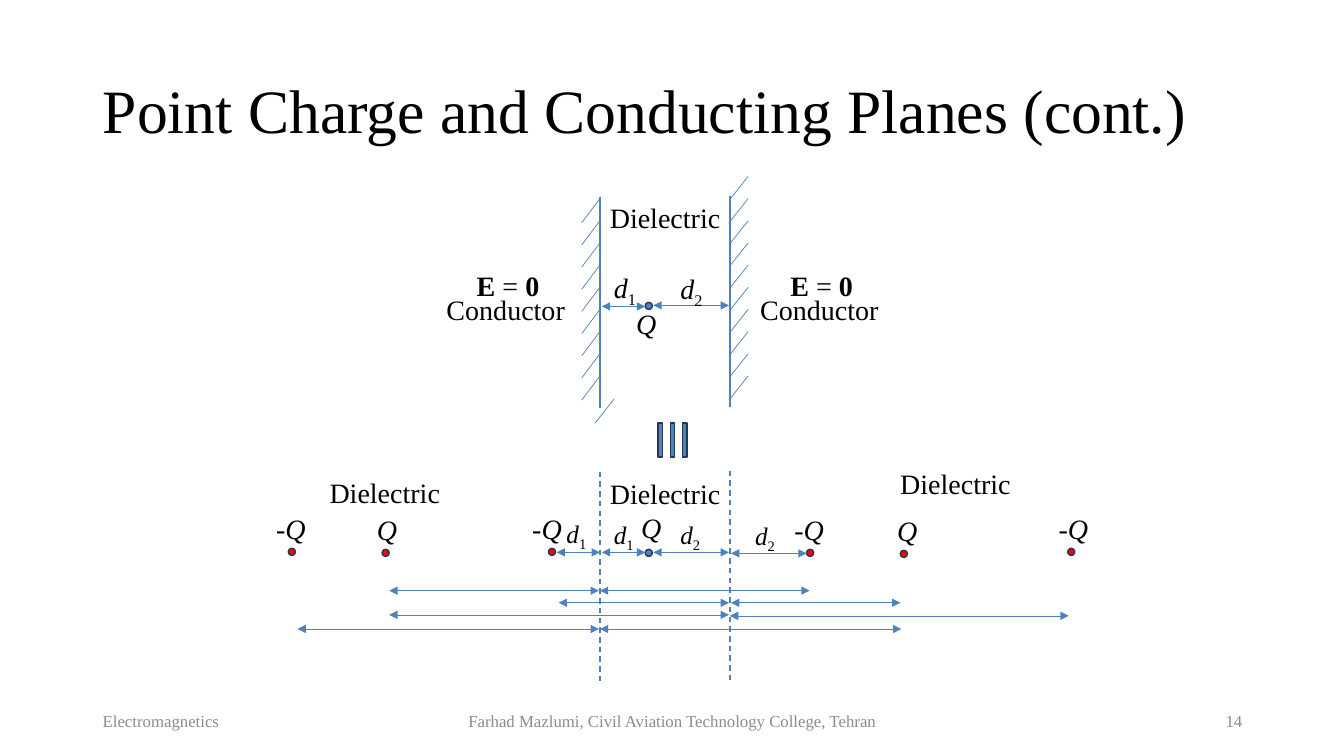
from lxml import etree
from pptx import Presentation
from pptx import util as u
from pptx.dml.color import RGBColor
from pptx.enum import dml, shapes, text
from pptx.oxml import ns

BLACK = RGBColor(0x00, 0x00, 0x00)
GRAY = RGBColor(0x8C, 0x8C, 0x8C)
BLUE = RGBColor(0x4F, 0x81, 0xBD)
NAVY = RGBColor(0x23, 0x39, 0x53)
RED = RGBColor(0xFF, 0x00, 0x00)

LEFT_PLANE = 5.95
RIGHT_PLANE = 7.24
HATCH_STEP = 0.22
HATCH_RISE = 0.24


def write(paragraph, content, size=20, color=BLACK, bold=False, italic=False, subscript=False):
    run = paragraph.add_run()
    run.text = content
    run.font.name = "Times New Roman"
    run.font.size = u.Pt(size)
    run.font.color.rgb = color
    run.font.bold = bold
    run.font.italic = italic
    if subscript:
        run.font._element.set("baseline", "-25000")


class Diagram:
    def __init__(self, slide):
        self.slide = slide

    def title(self, content, left, top, width, height):
        shape = self.slide.shapes.title
        shape.left, shape.top = u.Inches(left), u.Inches(top)
        shape.width, shape.height = u.Inches(width), u.Inches(height)
        frame = shape.text_frame
        frame.auto_size = text.MSO_AUTO_SIZE.NONE
        frame.vertical_anchor = text.MSO_ANCHOR.MIDDLE
        paragraph = frame.paragraphs[0]
        paragraph.alignment = text.PP_ALIGN.LEFT
        paragraph.line_spacing = 0.9
        write(paragraph, content, size=44)

    def box(self, left, top, width, height, wrap=True):
        shape = self.slide.shapes.add_textbox(
            u.Inches(left), u.Inches(top), u.Inches(width), u.Inches(height))
        shape.text_frame.word_wrap = wrap
        return shape.text_frame

    def label(self, content, left, top, width, height=0.44, wrap=True, **style):
        frame = self.box(left, top, width, height, wrap)
        write(frame.paragraphs[0], content, **style)

    def footer(self, content, left, width, alignment):
        frame = self.box(left, 6.95, width, 0.4)
        frame.vertical_anchor = text.MSO_ANCHOR.MIDDLE
        frame.paragraphs[0].alignment = alignment
        write(frame.paragraphs[0], content, size=12, color=GRAY)

    def distance(self, index, left, top, size):
        paragraph = self.box(left, top, 0.44, 0.44 if size == 20 else 0.4).paragraphs[0]
        write(paragraph, "d", size=size, italic=True)
        write(paragraph, index, size=size, subscript=True)

    def conductor(self, left):
        paragraph = self.box(left + 0.3, 2.61, 0.83, 0.44, wrap=False).paragraphs[0]
        write(paragraph, "E", bold=True)
        write(paragraph, " = ")
        write(paragraph, "0", bold=True)
        self.label("Conductor", left, 2.85, 1.39, wrap=False)

    def solid(self, kind, left, top, width, height, color=BLUE):
        shape = self.slide.shapes.add_shape(
            kind, u.Inches(left), u.Inches(top), u.Inches(width), u.Inches(height))
        shape.shadow.inherit = False
        shape.fill.solid()
        shape.fill.fore_color.rgb = color
        shape.line.color.rgb = NAVY
        shape.line.width = u.Pt(1)
        return shape

    def charge(self, left, top, color=RED):
        self.solid(shapes.MSO_SHAPE.OVAL, left, top, 0.07, 0.07, color)

    def line(self, x1, y1, x2, y2, width=0.5, dashed=False):
        connector = self.slide.shapes.add_connector(
            shapes.MSO_CONNECTOR.STRAIGHT,
            u.Inches(x1), u.Inches(y1), u.Inches(x2), u.Inches(y2))
        connector.line.color.rgb = BLUE
        connector.line.width = u.Pt(width)
        if dashed:
            connector.line.dash_style = dml.MSO_LINE.DASH
        etree.SubElement(connector._element.spPr, ns.qn("a:effectLst"))
        return connector

    def span(self, right, left, y):
        outline = self.line(right, y, left, y).line._get_or_add_ln()
        for end in ("a:headEnd", "a:tailEnd"):
            etree.SubElement(outline, ns.qn(end), type="triangle")


def draw_planes(diagram):
    diagram.line(LEFT_PLANE, 1.95, LEFT_PLANE, 4.05, width=1.5)
    diagram.line(RIGHT_PLANE, 1.94, RIGHT_PLANE, 4.04, width=1.5)
    for index in range(9):
        y = 1.97 + index * HATCH_STEP
        diagram.line(LEFT_PLANE, y, 5.77, y + HATCH_RISE)
    diagram.line(6.09, 3.96, 5.9, 3.96 + HATCH_RISE)
    for index in range(10):
        y = 1.75 + index * HATCH_STEP
        diagram.line(7.42, y, 7.23, y + HATCH_RISE)
    for left in (4.33, 7.44):
        diagram.conductor(left)
    diagram.charge(6.4, 3, BLUE)
    diagram.label("Q", 6.21, 2.99, 0.41, italic=True)
    diagram.span(7.23, 6.48, 3.03)
    diagram.span(6.4, 5.97, 3.04)
    diagram.distance("1", 5.99, 2.63, 20)
    diagram.distance("2", 6.65, 2.64, 20)


def draw_equivalence(diagram):
    for index in range(3):
        bar = diagram.solid(shapes.MSO_SHAPE.MATH_MINUS, 6.32 + index * 0.12, 4.27, 0.46, 0.19)
        bar.rotation = 270


def draw_images(diagram):
    diagram.line(LEFT_PLANE, 4.68, LEFT_PLANE, 6.78, width=1, dashed=True)
    diagram.line(RIGHT_PLANE, 4.67, RIGHT_PLANE, 6.77, width=1, dashed=True)
    diagram.charge(6.4, 5.45, BLUE)
    for left, top in ((2.86, 5.44), (3.79, 5.45), (5.44, 5.44),
                      (8, 5.45), (8.93, 5.46), (10.59, 5.44)):
        diagram.charge(left, top)
    for name, left, top, width in (
            ("-Q", 2.64, 5.03, 0.57), ("Q", 3.64, 5.04, 0.41), ("-Q", 5.18, 5.03, 0.51),
            ("Q", 6.26, 5.02, 0.41), ("-Q", 7.78, 5.04, 0.51), ("Q", 8.8, 5.05, 0.41),
            ("-Q", 10.4, 5.03, 0.51)):
        diagram.label(name, left, top, width, italic=True)
    for index, left, top in (("1", 5.52, 5.09), ("1", 5.99, 5.1),
                             ("2", 6.65, 5.1), ("2", 7.39, 5.11)):
        diagram.distance(index, left, top, 18)
    for right, left, y in (
            (5.95, 5.52, 5.48), (6.4, 5.97, 5.48), (7.23, 6.48, 5.48), (8, 7.25, 5.49),
            (5.94, 3.86, 5.86), (8.03, 5.95, 5.86),
            (7.23, 5.54, 5.98), (8.93, 7.25, 5.98),
            (7.23, 3.86, 6.1), (10.6, 7.24, 6.11),
            (5.94, 2.95, 6.24), (8.94, 5.95, 6.24)):
        diagram.span(right, left, y)


def main():
    presentation = Presentation()
    presentation.slide_width = u.Inches(13.33)
    presentation.slide_height = u.Inches(7.5)
    diagram = Diagram(presentation.slides.add_slide(presentation.slide_layouts[5]))
    diagram.title("Point Charge and Conducting Planes (cont.)", 0.92, 0.4, 11.5, 1.45)
    diagram.footer("Electromagnetics", 0.92, 3, text.PP_ALIGN.LEFT)
    diagram.footer("Farhad Mazlumi, Civil Aviation Technology College, Tehran",
                   4.42, 4.5, text.PP_ALIGN.CENTER)
    diagram.footer("14", 9.42, 3, text.PP_ALIGN.RIGHT)
    draw_planes(diagram)
    draw_equivalence(diagram)
    draw_images(diagram)
    for left, top in ((5.95, 1.94), (3.17, 4.67), (5.95, 4.68), (8.83, 4.58)):
        diagram.label("Dielectric", left, top, 1.3)
    presentation.save("out.pptx")


if __name__ == "__main__":
    main()
